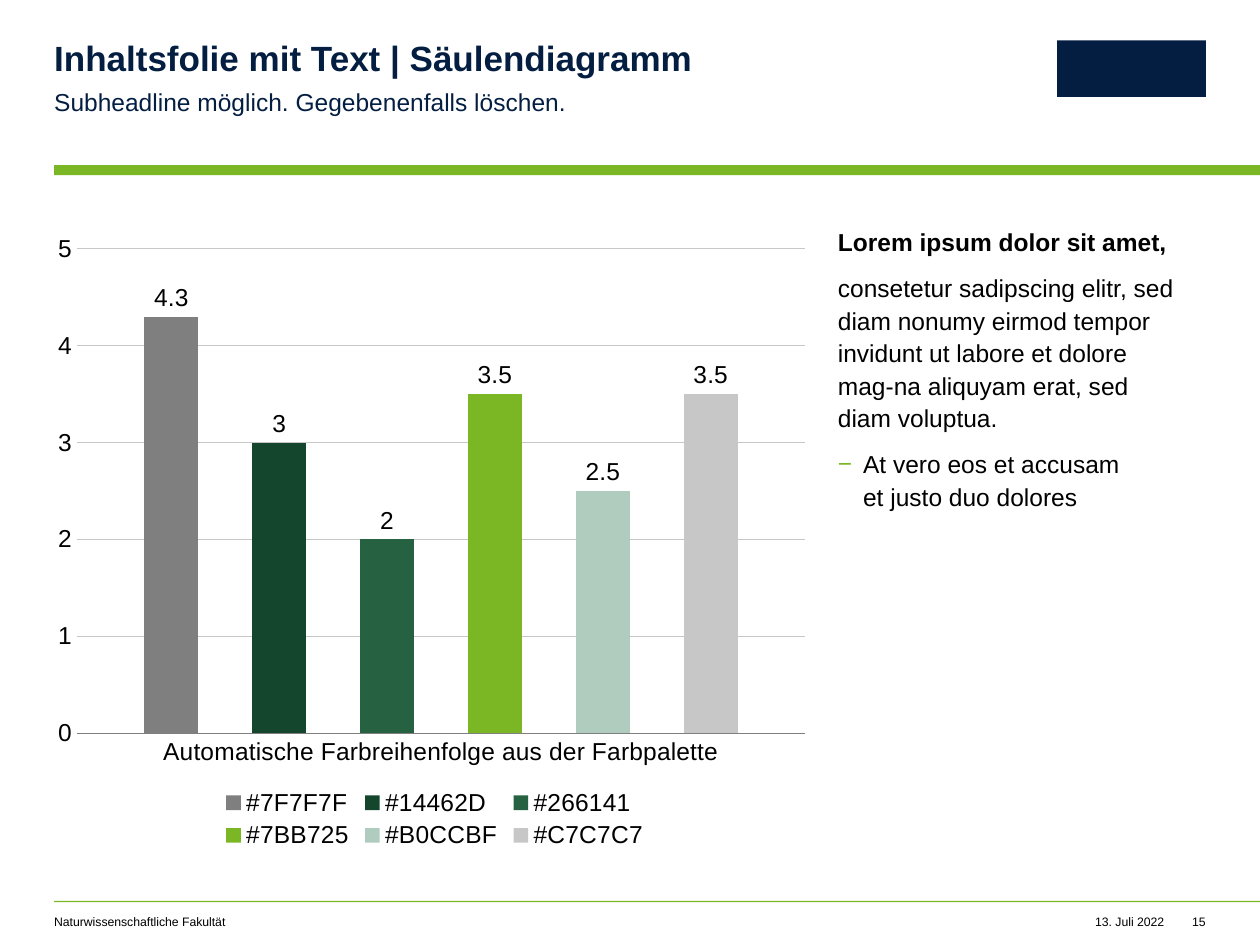
from lxml import etree
from pptx import Presentation
from pptx.chart.data import CategoryChartData
from pptx.dml.color import RGBColor
from pptx.enum.chart import XL_CHART_TYPE, XL_LABEL_POSITION, XL_LEGEND_POSITION, XL_TICK_MARK
from pptx.enum.shapes import MSO_SHAPE
from pptx.enum.text import PP_ALIGN
from pptx.oxml import parse_xml
from pptx.oxml.ns import nsdecls, qn
from pptx.util import Inches, Pt

COLUMN_CLUSTERED = XL_CHART_TYPE.COLUMN_CLUSTERED
OUTSIDE_END = XL_LABEL_POSITION.OUTSIDE_END
LEGEND_BOTTOM = XL_LEGEND_POSITION.BOTTOM
NO_TICK = XL_TICK_MARK.NONE
RECTANGLE = MSO_SHAPE.RECTANGLE
LEFT, RIGHT = PP_ALIGN.LEFT, PP_ALIGN.RIGHT

FONT = "Arial"
BLACK = RGBColor(0x00, 0x00, 0x00)
NAVY = RGBColor(0x04, 0x1E, 0x42)
GREEN = RGBColor(0x7B, 0xB7, 0x25)
AXIS_GREY = RGBColor(0x7F, 0x7F, 0x7F)
GRID_GREY = RGBColor(0xC7, 0xC7, 0xC7)

TITLE = "Inhaltsfolie mit Text | Säulendiagramm"
SUBHEADLINE = "Subheadline möglich. Gegebenenfalls löschen."
FACULTY, DATE, PAGE = "Naturwissenschaftliche Fakultät", "13. Juli 2022", "15"
BODY = [
    ("Lorem ipsum dolor sit amet,", {"bold": True}),
    ("consetetur sadipscing elitr, sed diam nonumy eirmod tempor invidunt ut labore "
     "et dolore mag-na aliquyam erat, sed diam voluptua.", {}),
    ("At vero eos et accusam\net justo duo dolores", {"bullet": "−"}),
]
CATEGORY = "Automatische Farbreihenfolge aus der Farbpalette"
SERIES = [  # each series is named after its own colour
    ("#7F7F7F", 4.3), ("#14462D", 3), ("#266141", 2),
    ("#7BB725", 3.5), ("#B0CCBF", 2.5), ("#C7C7C7", 3.5),
]
PLOT_AREA = {"x": 0.03, "y": 0.039, "w": 0.957, "h": 0.769}

WIDTH, HEIGHT = 10, 7.5
MARGIN = 0.43
RIGHT_EDGE = WIDTH - MARGIN
CONTENT_TOP, CONTENT_HEIGHT = 1.78, 5
CHART_WIDTH, BODY_LEFT = 6.04, 6.65
HEAD_WIDTH = 5.61
FOOTER_TOP, FOOTER_HEIGHT = 7.26, 0.12


def add_bullet(paragraph, char):
    props = paragraph._p.get_or_add_pPr()
    props.set("marL", str(Inches(0.2)))
    props.set("indent", str(-Inches(0.2)))
    colour = etree.SubElement(props, qn("a:buClr"))
    etree.SubElement(colour, qn("a:srgbClr")).set("val", str(GREEN))
    etree.SubElement(props, qn("a:buFont")).set("typeface", FONT)
    etree.SubElement(props, qn("a:buChar")).set("char", char)


def add_text(slide, box, paragraphs, size=14, color=BLACK, align=LEFT,
             spacing=1.0, after=0, right_inset=0, wrap=True):
    """Add a text box; paragraphs are (text, format) pairs."""
    frame = slide.shapes.add_textbox(*map(Inches, box)).text_frame
    frame.word_wrap = wrap
    frame.margin_left = frame.margin_top = frame.margin_bottom = 0
    frame.margin_right = Inches(right_inset)
    for index, (text, style) in enumerate(paragraphs):
        paragraph = frame.add_paragraph() if index else frame.paragraphs[0]
        paragraph.text = text
        paragraph.alignment = align
        paragraph.line_spacing = spacing
        paragraph.space_after = Pt(after)
        if "bullet" in style:
            add_bullet(paragraph, style["bullet"])
        for run in paragraph.runs:
            set_font(run.font, size, color, style.get("bold", False))


def set_font(font, size=14, color=BLACK, bold=False):
    font.name, font.size, font.bold = FONT, Pt(size), bold
    font.color.rgb = color


def add_block(slide, box, color):
    block = slide.shapes.add_shape(RECTANGLE, *map(Inches, box))
    block.shadow.inherit = False
    block.fill.solid()
    block.fill.fore_color.rgb = color
    block.line.fill.background()


def place_plot(chart):
    """Fix the inner plot area as shares of the chart's size."""
    sizes = "".join(f'<c:{key} val="{share}"/>' for key, share in PLOT_AREA.items())
    layout = parse_xml(
        f'<c:layout {nsdecls("c")}><c:manualLayout><c:layoutTarget val="inner"/>'
        f'<c:xMode val="edge"/><c:yMode val="edge"/>{sizes}</c:manualLayout></c:layout>')
    plot_area = chart._chartSpace.chart.plotArea
    for old in plot_area.findall(qn("c:layout")):
        plot_area.remove(old)
    plot_area.insert(0, layout)


def add_column_chart(slide, box):
    data = CategoryChartData()
    data.categories = [CATEGORY]
    for name, value in SERIES:
        data.add_series(name, [value])
    chart = slide.shapes.add_chart(COLUMN_CLUSTERED, *map(Inches, box), data).chart
    chart.has_title = False
    set_font(chart.font)
    place_plot(chart)

    chart.has_legend = True
    chart.legend.position = LEGEND_BOTTOM
    chart.legend.include_in_layout = False
    set_font(chart.legend.font)

    plot = chart.plots[0]
    plot.gap_width, plot.overlap, plot.vary_by_categories = 250, -100, False
    for series in plot.series:
        series.format.fill.solid()
        series.format.fill.fore_color.rgb = RGBColor.from_string(series.name.lstrip("#"))
        labels = series.data_labels
        labels.show_value = True
        labels.position = OUTSIDE_END
        set_font(labels.font)

    categories, values = chart.category_axis, chart.value_axis
    for axis in (categories, values):
        axis.major_tick_mark = axis.minor_tick_mark = NO_TICK
        set_font(axis.tick_labels.font)
    values.minimum_scale, values.maximum_scale, values.major_unit = 0, 5, 1
    values.format.line.fill.background()
    for line, color in ((categories.format.line, AXIS_GREY),
                        (values.major_gridlines.format.line, GRID_GREY)):
        line.color.rgb = color
        line.width = Pt(0.5)


def main():
    deck = Presentation()
    deck.slide_width, deck.slide_height = Inches(WIDTH), Inches(HEIGHT)
    slide = deck.slides.add_slide(deck.slide_layouts[6])

    for top, thickness in ((1.31, 0.08), (7.15, 0.01)):
        add_block(slide, (MARGIN, top, WIDTH - MARGIN, thickness), GREEN)
    add_block(slide, (8.39, 0.32, 1.18, 0.45), NAVY)

    add_text(slide, (MARGIN, 0.33, HEAD_WIDTH, 0.3), [(TITLE, {"bold": True})],
             size=20, color=NAVY, spacing=0.9)
    add_text(slide, (MARGIN, 0.67, HEAD_WIDTH, 0.24), [(SUBHEADLINE, {})],
             color=NAVY, spacing=1.1, after=8, right_inset=0.39)

    add_column_chart(slide, (MARGIN, CONTENT_TOP, CHART_WIDTH, CONTENT_HEIGHT))
    add_text(slide, (BODY_LEFT, CONTENT_TOP, RIGHT_EDGE - BODY_LEFT, CONTENT_HEIGHT),
             BODY, spacing=1.1, after=8, right_inset=0.2)

    for text, left, width, align in ((FACULTY, MARGIN, 4.49, LEFT),
                                     (DATE, 8.53, 0.71, RIGHT),
                                     (PAGE, RIGHT_EDGE - 0.2, 0.2, RIGHT)):
        add_text(slide, (left, FOOTER_TOP, width, FOOTER_HEIGHT), [(text, {})],
                 size=7, align=align, wrap=align == LEFT)

    deck.save("out.pptx")


if __name__ == "__main__":
    main()
